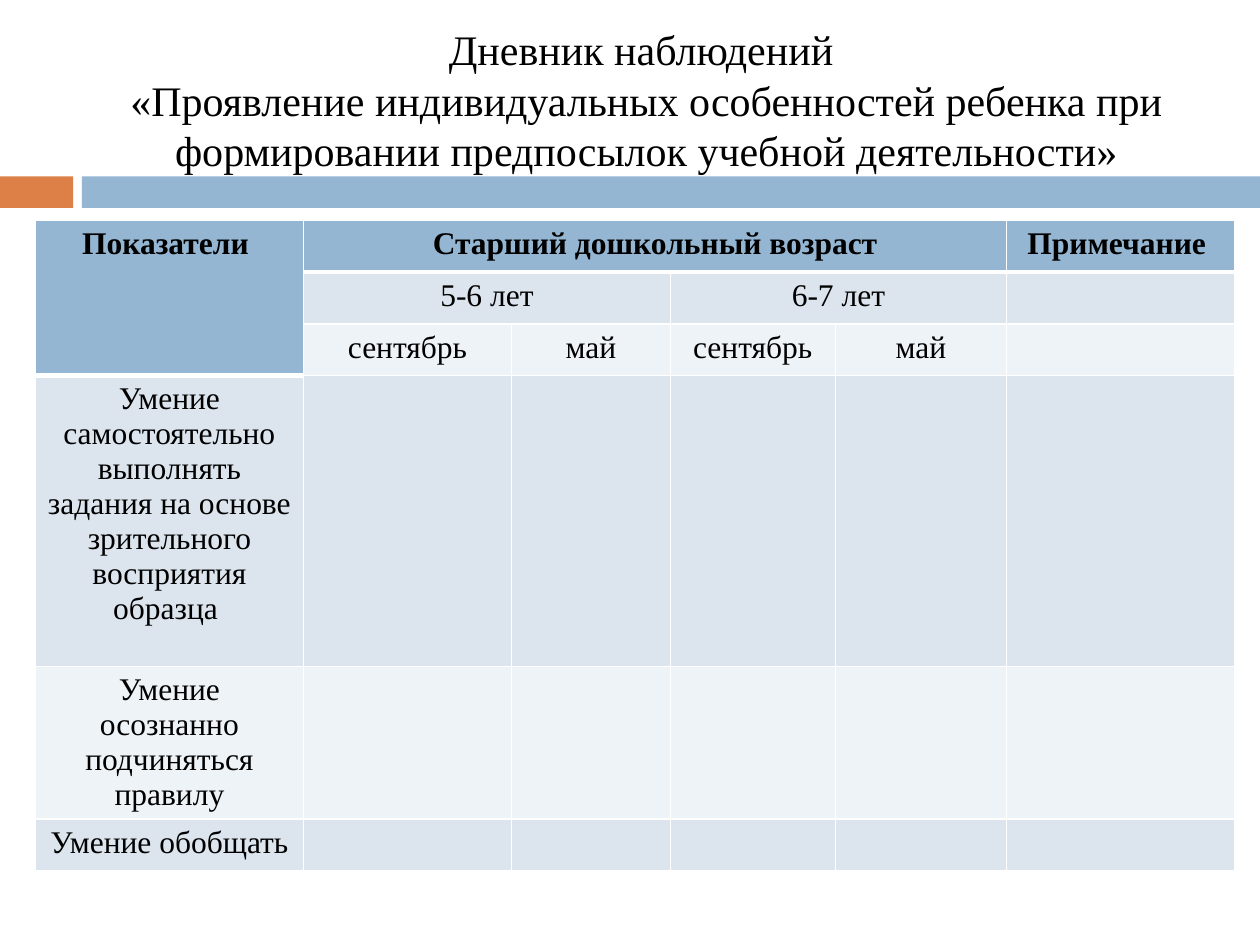
from lxml import etree
from pptx import Presentation
from pptx.dml.color import RGBColor
from pptx.enum.shapes import MSO_SHAPE
from pptx.enum.text import MSO_ANCHOR, MSO_AUTO_SIZE, PP_ALIGN
from pptx.oxml.ns import qn
from pptx.util import Inches, Pt

RECT = MSO_SHAPE.RECTANGLE
MIDDLE = MSO_ANCHOR.MIDDLE
CENTER = PP_ALIGN.CENTER
NO_FIT = MSO_AUTO_SIZE.NONE

# Content
FONT = "Times New Roman"
COLORS = {"accent": "DD8047", "head": "94B6D2", "dark": "DCE5EE",
          "light": "EEF3F7", "line": "FFFFFF", "text": "000000"}
TITLE = ("Дневник наблюдений \v«Проявление индивидуальных особенностей "
         "ребенка при формировании предпосылок учебной деятельности»")
BARS = [(0, 0.58, "accent"), (0.65, 9.35, "head")]
ROWS = [
    ["Показатели ", "Старший дошкольный возраст", "", "", "", "Примечание "],
    ["", "5-6 лет", "", "6-7 лет", "", ""],
    ["", "сентябрь", "май", "сентябрь", "май", ""],
    ["Умение самостоятельно выполнять задания на основе "
     "зрительного восприятия образца "],
    ["Умение осознанно подчиняться правилу"],
    ["Умение обобщать "],
]
MERGES = [((0, 0), (2, 0)), ((0, 1), (0, 4)), ((1, 1), (1, 2)), ((1, 3), (1, 4))]
WIDTHS = [2.13, 1.65, 1.26, 1.31, 1.36, 1.81]
HEIGHTS = [0.41, 0.41, 0.41, 2.31, 1.21, 0.41]


def rgb(name):
    return RGBColor.from_string(COLORS[name])


def style(para, size, bold=False):
    para.alignment = CENTER
    font = para.font
    font.name, font.size, font.bold = FONT, Pt(size), bold
    font.color.rgb = rgb("text")


def is_head(row, col):
    return row == 0 or (col == 0 and row < 3)


def edge(cell, side, width):
    line = etree.SubElement(cell._tc.get_or_add_tcPr(), qn("a:ln" + side),
                            w=str(Pt(width)))
    fill = etree.SubElement(line, qn("a:solidFill"))
    etree.SubElement(fill, qn("a:srgbClr"), val=COLORS["line"])


def thick(row, col):
    """Width of the line below a cell: heavy where the heading ends."""
    return 3 if (row, col) == (2, 0) or (row == 0 and col > 0) else 1


prs = Presentation()
prs.slide_width, prs.slide_height = Inches(10), Inches(7.5)
slide = prs.slides.add_slide(prs.slide_layouts[5])

# Bars under the title
for left, width, color in BARS:
    bar = slide.shapes.add_shape(RECT, Inches(left), Inches(1.4),
                                 Inches(width), Inches(0.25))
    bar.shadow.inherit = False
    bar.fill.solid()
    bar.fill.fore_color.rgb = rgb(color)
    bar.line.fill.background()

# Title
title = slide.shapes.title
title.left, title.top = Inches(0.67), Inches(0.25)
title.width, title.height = Inches(8.92), Inches(1.08)
frame = title.text_frame
frame.word_wrap, frame.auto_size = True, NO_FIT
frame.vertical_anchor = MIDDLE
para = frame.paragraphs[0]
para.text = TITLE
style(para, 24)

# Table
table = slide.shapes.add_table(
    len(ROWS), len(WIDTHS), Inches(0.28), Inches(1.75),
    Inches(sum(WIDTHS)), Inches(sum(HEIGHTS))).table
for col, width in zip(table.columns, WIDTHS):
    col.width = Inches(width)
for row, height in zip(table.rows, HEIGHTS):
    row.height = Inches(height)

for r, texts in enumerate(ROWS):
    band = "dark" if r % 2 else "light"
    for c in range(len(WIDTHS)):
        cell = table.cell(r, c)
        for side, width in (("L", 1), ("R", 1), ("T", thick(r - 1, c)),
                            ("B", thick(r, c))):
            edge(cell, side, width)
        cell.fill.solid()
        cell.fill.fore_color.rgb = rgb("head" if is_head(r, c) else band)
        para = cell.text_frame.paragraphs[0]
        if c < len(texts) and texts[c]:
            para.text = texts[c]
        style(para, 18, is_head(r, c))

for start, end in MERGES:
    table.cell(*start).merge(table.cell(*end))

prs.save("out.pptx")
